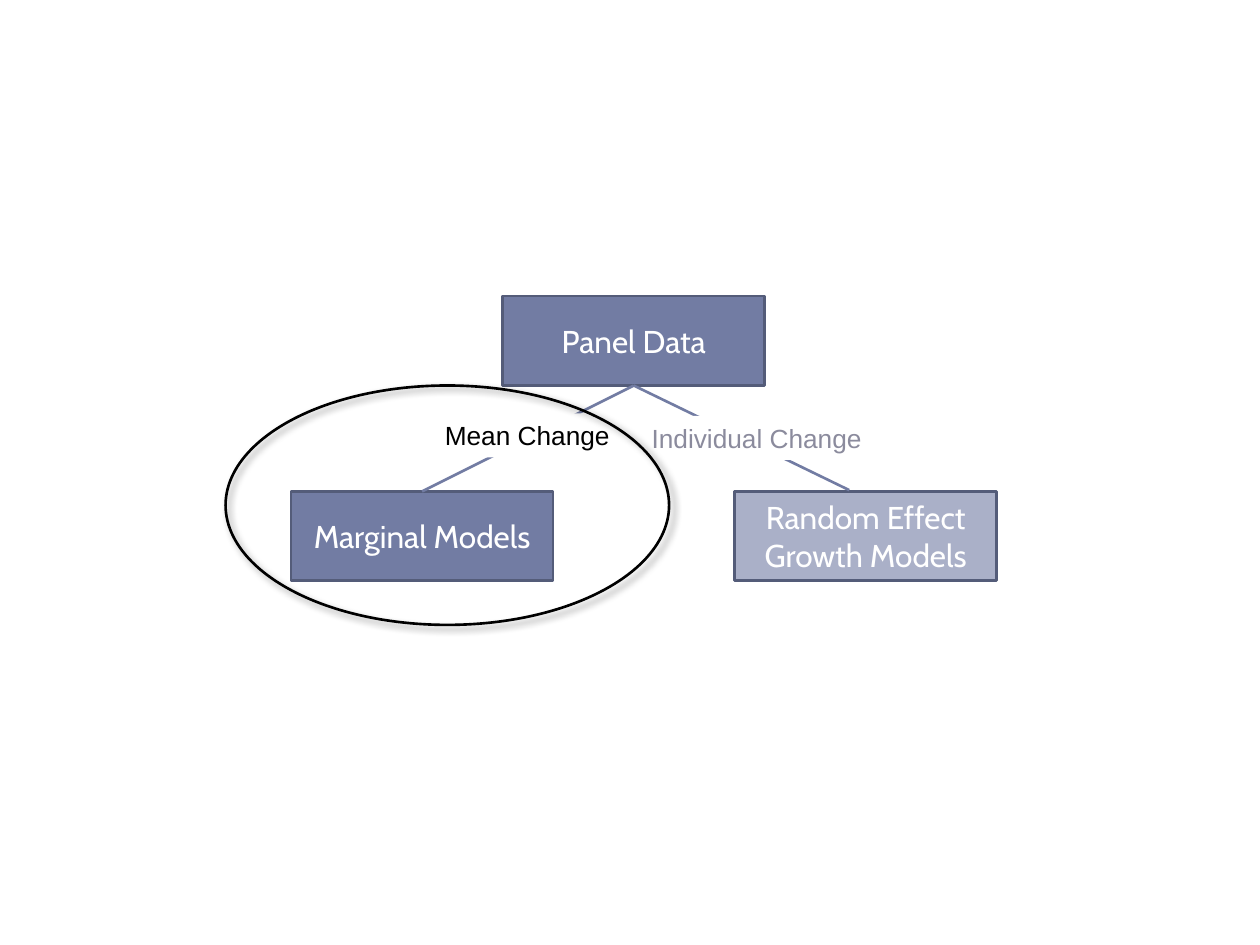
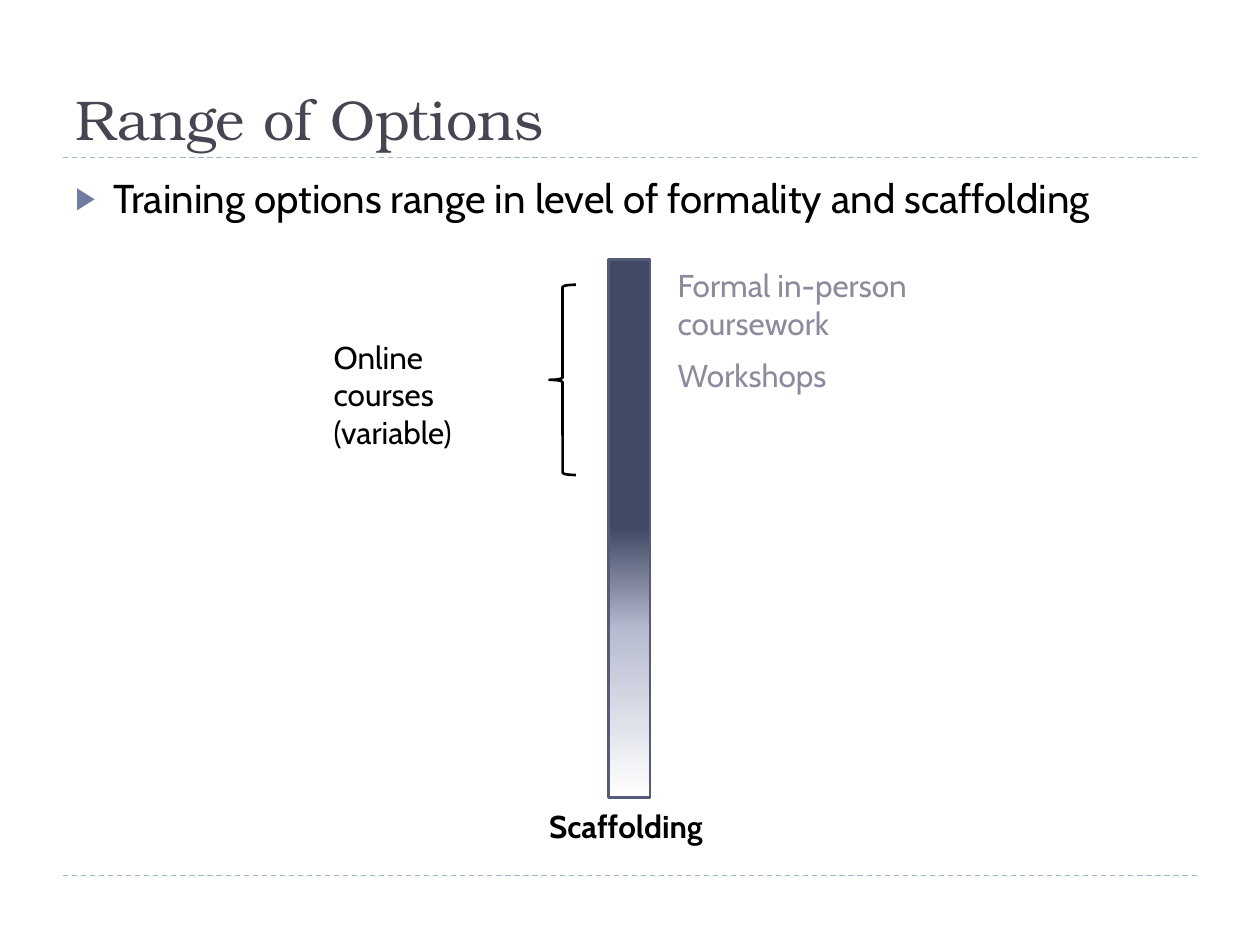
from dataclasses import dataclass
from typing import Any, NamedTuple, Optional

import lxml.etree
import pptx
import pptx.dml.color
import pptx.enum.dml
import pptx.enum.shapes
import pptx.enum.text
import pptx.oxml.ns
import pptx.util

FORM = pptx.enum.shapes.MSO_SHAPE
SIDE = pptx.enum.text.PP_ALIGN
HOLD = pptx.enum.text.MSO_ANCHOR
COLS, ROWS = 100, 75
WIDE, HIGH = pptx.util.Inches(10), pptx.util.Inches(7.5)


@dataclass(frozen=True)
class Theme:
    white: str = "FFFFFF"
    black: str = "000000"
    main: str = "727CA3"
    pale: str = "AAB0C8"
    edge: str = "545C79"
    mute: str = "8B8B9D"
    head: str = "464653"
    rule: str = "9FB8CD"
    fade: tuple = ((0, "424965"), (50, "424965"), (69, "B7BCD0"), (100, "FFFFFF"))
    sans: str = "Cabin"
    serif: str = "TeX Gyre Bonum"
    plain: str = "Arial"
    title: float = 32
    lead: float = 23
    body: float = 18
    label: float = 15
    stroke: float = 1.5
    thin: float = 0.75


T = Theme()


class Area(NamedTuple):
    col: float
    row: float
    cols: float
    rows: float


class Type(NamedTuple):
    font: str = T.sans
    size: float = T.body
    color: str = T.black
    bold: bool = False
    side: Any = SIDE.LEFT
    hold: Any = HOLD.TOP
    wrap: bool = True


class Block(NamedTuple):
    area: Area
    form: Any = FORM.RECTANGLE
    fill: Optional[str] = None
    edge: Optional[str] = None


class Note(NamedTuple):
    text: str
    area: Area
    type: Type = Type()


def across(col: float) -> int:
    return round(WIDE * col / COLS)


def down(row: float) -> int:
    return round(HIGH * row / ROWS)


def frame(area: Area) -> tuple[int, int, int, int]:
    return across(area.col), down(area.row), across(area.cols), down(area.rows)


def tint(code: str) -> pptx.dml.color.RGBColor:
    return pptx.dml.color.RGBColor.from_string(code)


def add(parent: Any, tag: str, **attrs: Any) -> Any:
    pairs = {key: str(val) for key, val in attrs.items()}
    return lxml.etree.SubElement(parent, pptx.oxml.ns.qn(f"a:{tag}"), pairs)


def write(shape: Any, text: str, kind: Type) -> None:
    body = shape.text_frame
    body.text = text
    body.word_wrap = kind.wrap
    body.vertical_anchor = kind.hold
    for para in body.paragraphs:
        para.alignment = kind.side
        for run in para.runs:
            run.font.name = kind.font
            run.font.size = pptx.util.Pt(kind.size)
            run.font.bold = kind.bold
            run.font.color.rgb = tint(kind.color)


def draw(slide: Any, block: Block) -> Any:
    shape = slide.shapes.add_shape(block.form, *frame(block.area))
    if block.fill:
        shape.fill.solid()
        shape.fill.fore_color.rgb = tint(block.fill)
    else:
        shape.fill.background()
    if block.edge:
        shape.line.color.rgb = tint(block.edge)
        shape.line.width = pptx.util.Pt(T.stroke)
    else:
        shape.line.fill.background()
    shape.shadow.inherit = False
    return shape


def place(slide: Any, note: Note) -> Any:
    box = slide.shapes.add_textbox(*frame(note.area))
    write(box, note.text, note.type)
    return box


def link(slide: Any, start: tuple, end: tuple, color: str, width: float) -> Any:
    line = slide.shapes.add_connector(
        pptx.enum.shapes.MSO_CONNECTOR.STRAIGHT,
        across(start[0]), down(start[1]), across(end[0]), down(end[1]),
    )
    line.line.color.rgb = tint(color)
    line.line.width = pptx.util.Pt(width)
    add(line._element.spPr, "effectLst")
    return line


def cast(shape: Any) -> None:
    glow = shape._element.spPr.find(pptx.oxml.ns.qn("a:effectLst"))
    shade = add(glow, "outerShdw", blurRad=pptx.util.Pt(4), dist=pptx.util.Pt(3),
                dir=45 * 60000, algn="tl", rotWithShape=0)
    add(add(shade, "srgbClr", val=T.black), "alpha", val=40000)


def blend(shape: Any, stops: tuple) -> None:
    shape.fill.gradient()
    shape.fill.gradient_angle = 270
    ramp = shape._element.spPr.find(".//" + pptx.oxml.ns.qn("a:gsLst"))
    for stop in list(ramp):
        ramp.remove(stop)
    for share, color in stops:
        add(add(ramp, "gs", pos=share * 1000), "srgbClr", val=color)


def mark(para: Any) -> None:
    props = para._p.get_or_add_pPr()
    props.set("marL", str(across(3)))
    props.set("indent", str(-across(3)))
    add(add(props, "buClr"), "srgbClr", val=T.main)
    add(props, "buSzPct", val=76000)
    add(props, "buFont", typeface=T.plain)
    add(props, "buChar", char="▶")


def panel(slide: Any) -> None:
    inner = Type(color=T.white, side=SIDE.CENTER, hold=HOLD.MIDDLE)
    nodes = (
        ("Panel Data", 39.9, 23.5, T.main),
        ("Random Effect Growth Models", 58.3, 39, T.pale),
        ("Marginal Models", 23.1, 39, T.main),
    )
    boxes = []
    for text, col, row, fill in nodes:
        box = draw(slide, Block(Area(col, row, 20.8, 7.1), fill=fill, edge=T.edge))
        write(box, text, inner)
        boxes.append(box)
    root, growth, mean = boxes
    left = link(slide, (50.3, 30.6), (33.5, 39), T.main, T.stroke)
    left.begin_connect(root, 2)
    left.end_connect(mean, 0)
    right = link(slide, (50.3, 30.6), (67.4, 38.9), T.main, T.stroke)
    right.begin_connect(root, 2)

    labels = (
        ("Mean Change", Area(34.2, 32.8, 15.3, 3.5), T.black),
        ("Individual Change", Area(50.6, 33, 18.9, 3.5), T.mute),
    )
    for text, area, color in labels:
        tag = draw(slide, Block(area, fill=T.white))
        write(tag, text, Type(T.plain, T.label, color, side=SIDE.CENTER,
                              hold=HOLD.MIDDLE, wrap=False))
    cast(draw(slide, Block(Area(17.9, 30.6, 35.2, 19), FORM.OVAL, edge=T.black)))


def base(slide: Any, title: str, lead: str) -> None:
    for row in (69.5, 12.5):
        rule = link(slide, (5, row), (95, row), T.rule, T.thin)
        rule.line.dash_style = pptx.enum.dml.MSO_LINE.DASH
    place(slide, Note(title, Area(5, 1.7, 90, 10.8),
                      Type(T.serif, T.title, T.head, hold=HOLD.BOTTOM)))
    body = place(slide, Note(lead, Area(5, 13.3, 90, 54), Type(size=T.lead)))
    for para in body.text_frame.paragraphs:
        mark(para)


def range_of(slide: Any) -> None:
    base(slide, "Range of Options",
         "Training options range in level of formality and scaffolding")
    blend(draw(slide, Block(Area(48.3, 20.6, 3.3, 42.7), edge=T.edge)), T.fade)
    draw(slide, Block(Area(43.6, 22.6, 2.1, 15.1), FORM.LEFT_BRACE, edge=T.black))
    faint = Type(color=T.mute)
    notes = (
        Note("Formal in-person coursework", Area(52.8, 20.6, 32, 7.1), faint),
        Note("Workshops", Area(52.8, 27.8, 13.9, 4), faint),
        Note("Online courses\n(variable)", Area(25.5, 26.3, 17, 10.1)),
        Note("Scaffolding", Area(42.6, 63.6, 14.8, 4), Type(bold=True)),
    )
    for note in notes:
        place(slide, note)


def main() -> None:
    deck = pptx.Presentation()
    deck.slide_width, deck.slide_height = WIDE, HIGH
    for build in (panel, range_of):
        build(deck.slides.add_slide(deck.slide_layouts[6]))
    deck.save("out.pptx")


if __name__ == "__main__":
    main()
